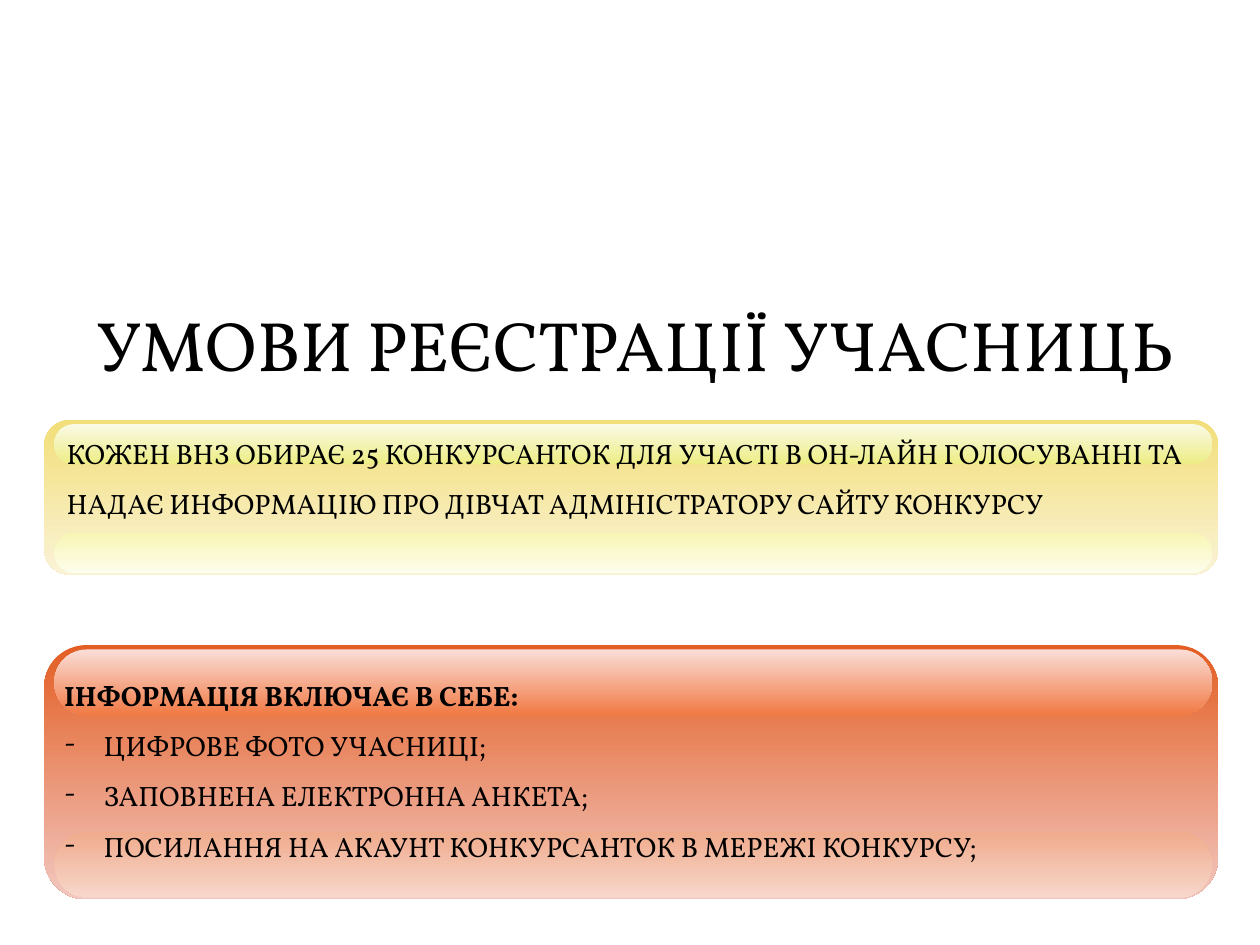
from dataclasses import dataclass

from lxml.etree import SubElement
from pptx import Presentation
from pptx.dml.color import RGBColor
from pptx.enum.shapes import MSO_SHAPE
from pptx.enum.text import MSO_ANCHOR, MSO_AUTO_SIZE, PP_ALIGN
from pptx.oxml.ns import qn
from pptx.util import Pt

FONT = "Vollkorn"
PANEL_LEFT, PANEL_WIDTH = 25.2, 671
GLOSS_LEFT, GLOSS_WIDTH = 31, 661.7
GLOSS_SHARE = 0.26  # gloss height as a share of its panel
LIST_INDENT = 22.5


@dataclass
class Panel:
    top: float
    height: float
    body: tuple[str, str]
    lower_gloss: tuple[str, str]
    upper_gloss: tuple[str, str]


PANELS = [
    Panel(239.8, 88.6, ("F2DE78", "FAF3D7"), ("F8F6B4", "FDFDED"), ("FAFAE6", "EDED85")),
    Panel(368.6, 145.4, ("E35E23", "F2C7C0"), ("F0AB8C", "F7D7CB"), ("FADED8", "F17943")),
]
STATEMENT = ("КОЖЕН ВНЗ ОБИРАЄ 25 КОНКУРСАНТОК ДЛЯ УЧАСТІ В ОН-ЛАЙН ГОЛОСУВАННІ ТА "
             "НАДАЄ ИНФОРМАЦІЮ ПРО ДІВЧАТ АДМІНІСТРАТОРУ САЙТУ КОНКУРСУ")
LIST_HEADING = "ІНФОРМАЦІЯ ВКЛЮЧАЄ В СЕБЕ:"
LIST_ITEMS = [
    "ЦИФРОВЕ ФОТО УЧАСНИЦІ;",
    "ЗАПОВНЕНА ЕЛЕКТРОННА АНКЕТА;",
    "ПОСИЛАННЯ НА АКАУНТ КОНКУРСАНТОК В МЕРЕЖІ КОНКУРСУ;",
]


def color(hex_code: str) -> RGBColor:
    return RGBColor.from_string(hex_code)


def place(shape, left: float, top: float, width: float, height: float) -> None:
    shape.left, shape.top = Pt(left), Pt(top)
    shape.width, shape.height = Pt(width), Pt(height)


def add_bar(slide, left: float, top: float, width: float, height: float,
            rounding: float, shades: tuple[str, str]) -> None:
    bar = slide.shapes.add_shape(MSO_SHAPE.ROUNDED_RECTANGLE,
                                 Pt(left), Pt(top), Pt(width), Pt(height))
    bar.adjustments[0] = rounding
    bar.shadow.inherit = False
    bar.line.fill.background()
    bar.fill.gradient()
    bar.fill.gradient_angle = 270  # top to bottom
    for stop, shade, position in zip(bar.fill.gradient_stops, shades, (0, 1)):
        stop.color.rgb = color(shade)
        stop.position = position


def add_panel(slide, panel: Panel) -> None:
    gloss = panel.height * GLOSS_SHARE
    add_bar(slide, PANEL_LEFT, panel.top, PANEL_WIDTH, panel.height, 0.167, panel.body)
    lower_top = panel.top + panel.height - gloss - 1
    add_bar(slide, GLOSS_LEFT, lower_top, GLOSS_WIDTH, gloss, 0.5, panel.lower_gloss)
    add_bar(slide, GLOSS_LEFT, panel.top + 2.5, GLOSS_WIDTH, gloss, 0.5, panel.upper_gloss)


def prepare_frame(frame, wrap: bool = True) -> None:
    frame.word_wrap = wrap
    frame.auto_size = MSO_AUTO_SIZE.NONE
    frame.vertical_anchor = MSO_ANCHOR.TOP


def format_paragraph(paragraph, size: float, spacing: float = 1, bold: bool = False) -> None:
    paragraph.alignment = PP_ALIGN.LEFT
    paragraph.line_spacing = spacing
    paragraph.space_before = Pt(0)
    for run in paragraph.runs:
        run.font.name, run.font.size, run.font.bold = FONT, Pt(size), bold
        run.font.color.rgb = color("000000")


def set_bullet(paragraph, mark: str = "") -> None:
    properties = paragraph._p.get_or_add_pPr()
    indent = Pt(LIST_INDENT) if mark else 0
    properties.set("marL", str(indent))
    properties.set("indent", str(-indent))
    if mark:
        SubElement(properties, qn("a:buFont"), typeface=FONT)
        SubElement(properties, qn("a:buChar"), char=mark)
    else:
        SubElement(properties, qn("a:buNone"))


def main() -> None:
    prs = Presentation()
    prs.slide_width, prs.slide_height = Pt(720), Pt(540)
    slide = prs.slides.add_slide(prs.slide_layouts[1])
    title, conditions = slide.placeholders

    # Title
    place(title, 48.2, 168.5, 648.7, 55.4)
    prepare_frame(title.text_frame, wrap=False)
    title.text_frame.text = "УМОВИ РЕЄСТРАЦІЇ УЧАСНИЦЬ"
    format_paragraph(title.text_frame.paragraphs[0], 40)

    # Glossy panels
    for panel in PANELS:
        add_panel(slide, panel)

    # Statement on the yellow panel
    statement = slide.shapes.add_textbox(Pt(31), Pt(236.2), Pt(666.7), Pt(65.5))
    prepare_frame(statement.text_frame)
    statement.text_frame.text = STATEMENT
    format_paragraph(statement.text_frame.paragraphs[0], 16, 1.5)

    # List on the orange panel, brought in front of it
    slide.shapes.element.append(conditions.element)
    place(conditions, 29.5, 374.4, 661.7, 152.6)
    prepare_frame(conditions.text_frame)
    conditions.text_frame.text = "\n".join([LIST_HEADING, *LIST_ITEMS])
    for index, paragraph in enumerate(conditions.text_frame.paragraphs):
        set_bullet(paragraph, "-" if index else "")
        format_paragraph(paragraph, 16, 1.5, bold=index == 0)

    prs.save("out.pptx")


if __name__ == "__main__":
    main()
